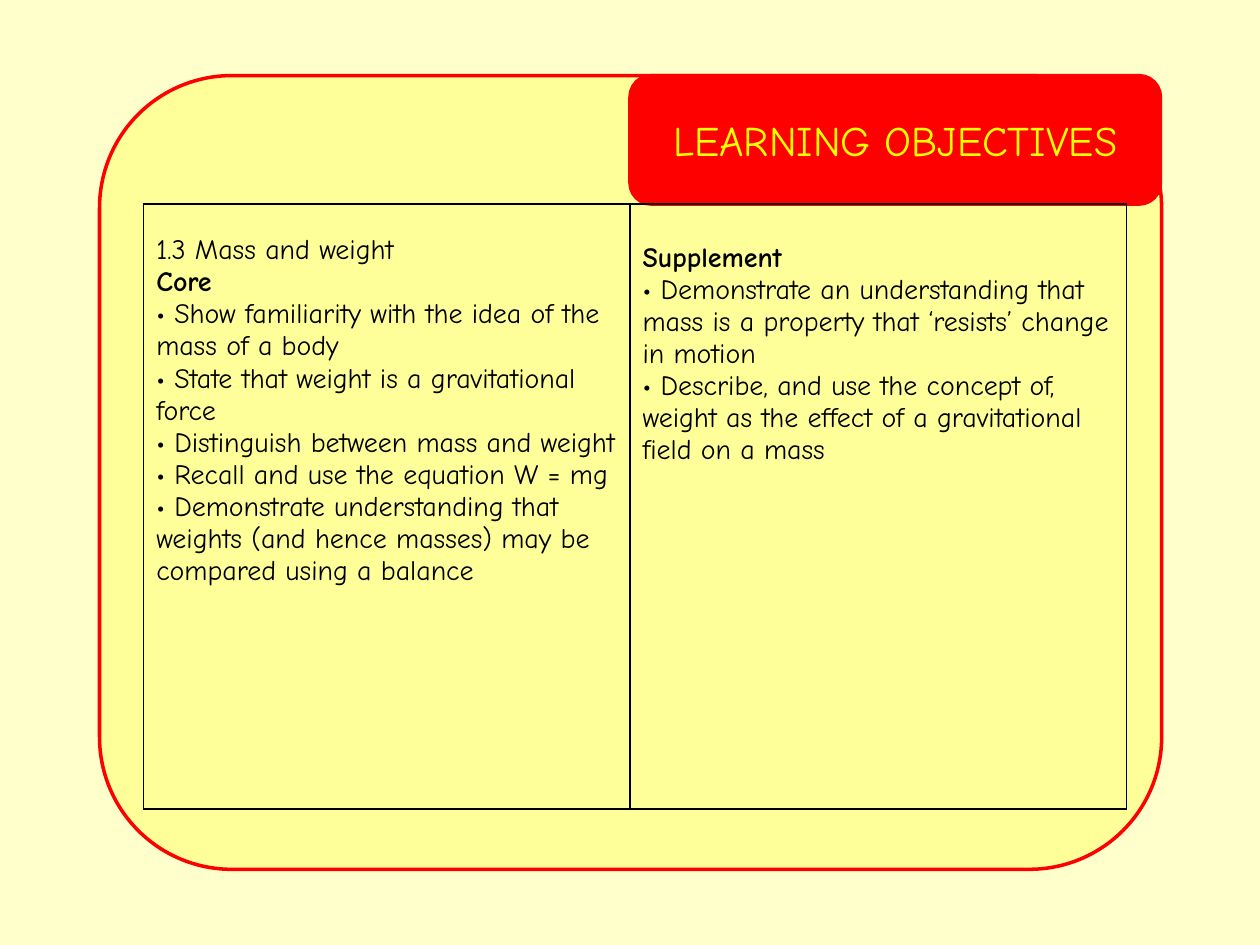
import pptx
import pptx.util
import pptx.dml.color
import pptx.enum.shapes
import pptx.enum.text
import pptx.oxml
import pptx.oxml.ns

Inches, Pt = pptx.util.Inches, pptx.util.Pt
SHAPE = pptx.enum.shapes.MSO_SHAPE
FONT = "Comic Neue"

# Each column: top margin, heading lines and bullet points
CORE = (0.24, ["1.3 Mass and weight", "Core"], [
    "Show familiarity with the idea of the mass of a body",
    "State that weight is a gravitational force",
    "Distinguish between mass and weight",
    "Recall and use the equation W = mg",
    "Demonstrate understanding that weights (and hence masses) "
    "may be compared using a balance",
])
EXTRA = (0.3, ["Supplement"], [
    "Demonstrate an understanding that mass is a property that "
    "‘resists’ change in motion",
    "Describe, and use the concept of, weight as the effect of a "
    "gravitational field on a mass",
])


def paint(color, code):
    color.rgb = pptx.dml.color.RGBColor.from_string(code)


def style(para, size, code, bold=False):
    font = para.font
    font.name, font.size, font.bold = FONT, Pt(size), bold
    paint(font.color, code)


def add_box(slide, kind, box, fill, line=None):
    shape = slide.shapes.add_shape(kind, *map(Inches, box))
    shape.shadow.inherit = False
    shape.fill.solid()
    paint(shape.fill.fore_color, fill)
    if line:
        paint(shape.line.color, line)
        shape.line.width = Pt(2)
    else:
        shape.line.fill.background()
    return shape


def add_title(shape, text):
    frame = shape.text_frame
    frame.vertical_anchor = pptx.enum.text.MSO_ANCHOR.MIDDLE
    para = frame.paragraphs[0]
    para.text = text
    para.alignment = pptx.enum.text.PP_ALIGN.CENTER
    style(para, 24, "FFFF00")


def set_border(cell, code, width):
    props = cell._tc.get_or_add_tcPr()
    space = pptx.oxml.ns.nsdecls("a")
    for spot, side in enumerate("LRTB"):
        props.insert(spot, pptx.oxml.parse_xml(
            f'<a:ln{side} {space} w="{Pt(width)}"><a:solidFill>'
            f'<a:srgbClr val="{code}"/></a:solidFill></a:ln{side}>'))


def fill_cell(cell, top, heads, points):
    cell.fill.background()
    set_border(cell, "000000", 1)
    cell.margin_top = Inches(top)
    lines = heads + ["• " + point for point in points]
    cell.text = "\n".join(lines)
    for row, para in enumerate(cell.text_frame.paragraphs):
        # The last heading line names the column
        style(para, 16, "000000", bold=row == len(heads) - 1)


def add_goals(slide, box, widths, columns):
    table = slide.shapes.add_table(
        1, len(columns), *map(Inches, box)).table
    table.first_row = table.horz_banding = False
    for index, (width, column) in enumerate(zip(widths, columns)):
        table.columns[index].width = Inches(width)
        fill_cell(table.cell(0, index), *column)


def main():
    deck = pptx.Presentation()
    deck.slide_width, deck.slide_height = Inches(10), Inches(7.5)
    slide = deck.slides.add_slide(deck.slide_layouts[6])

    # Backdrop and rounded panel
    add_box(slide, SHAPE.RECTANGLE, (0, 0, 10, 7.5), "FFFFCC")
    add_box(slide, SHAPE.ROUNDED_RECTANGLE, (0.79, 0.6, 8.43, 6.3),
            "FFFF99", "FF0000")

    # Title tab
    tab = add_box(slide, SHAPE.ROUNDED_RECTANGLE, (5, 0.6, 4.21, 1.02),
                  "FF0000", "FF0000")
    add_title(tab, "LEARNING OBJECTIVES")

    # Objectives
    add_goals(slide, (1.14, 1.62, 7.8, 4.8), (3.86, 3.94), (CORE, EXTRA))

    deck.save("out.pptx")


if __name__ == "__main__":
    main()
